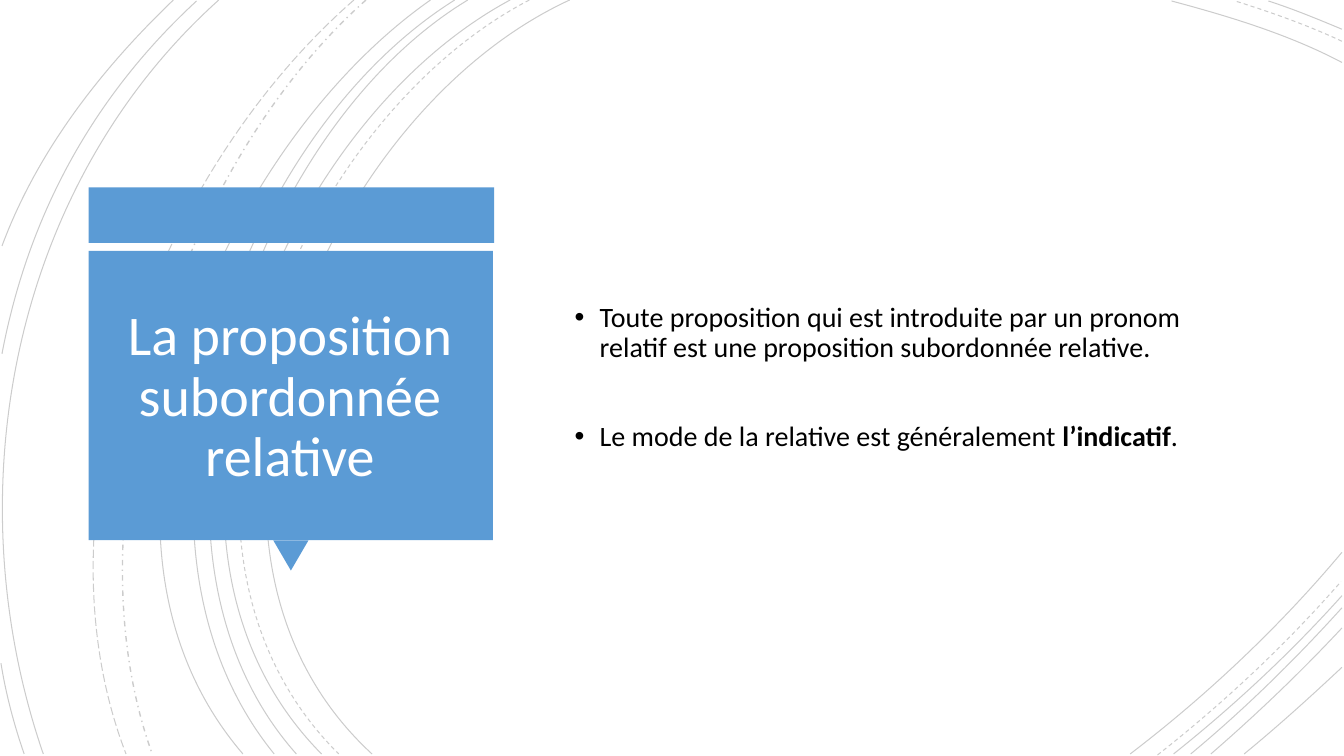
import pptx
import pptx.dml.color
import pptx.enum.dml
import pptx.enum.shapes
import pptx.enum.text
import pptx.oxml
import pptx.oxml.ns
import pptx.util
from lxml import etree

Inches = pptx.util.Inches
Pt = pptx.util.Pt
RGBColor = pptx.dml.color.RGBColor
Dash = pptx.enum.dml.MSO_LINE
Preset = pptx.enum.shapes.MSO_SHAPE
qn = pptx.oxml.ns.qn

BLUE = RGBColor(0x5B, 0x9B, 0xD5)
BLACK = RGBColor(0, 0, 0)
WHITE = RGBColor(255, 255, 255)

SOLID_ARCS = [
    [(5.65, 0), (3.15, 1.15), (1.43, 5.4), (3.69, 7.48)],
    [(13.31, 0.62), (12.78, 0.34), (12.18, 0.16), (11.62, 0.01)],
    [(11.21, 7.48), (11.97, 6.9), (12.69, 6.22), (13.31, 5.48)],
    [(5.06, 0), (2.7, 1.27), (1.1, 5.37), (3.19, 7.48)],
    [(13.31, 0.29), (13.07, 0.19), (12.83, 0.09), (12.58, 0.01)],
    [(11.64, 7.48), (12.23, 7.01), (12.8, 6.48), (13.31, 5.91)],
    [(4.64, 0), (2.44, 1.33), (1.1, 5.41), (2.94, 7.48)],
    [(11.81, 7.48), (12.34, 7.04), (12.84, 6.55), (13.31, 6.03)],
    [(4.51, 0), (2.31, 1.38), (0.97, 5.33), (2.72, 7.48)],
    [(12.01, 7.48), (12.46, 7.09), (12.9, 6.67), (13.31, 6.23)],
    [(4.27, 0), (2.17, 1.47), (0.53, 5.29), (2.41, 7.48)],
    [(12.34, 7.48), (12.67, 7.21), (12.99, 6.92), (13.31, 6.62)],
    [(2.17, 0), (0.11, 1.85), (-0.46, 4.9), (0.43, 7.48)],
    [(1.95, 0.01), (0.92, 0.96), (0.28, 2.14), (0.02, 3.51)],
    [(0.01, 6.58), (0.06, 6.89), (0.14, 7.19), (0.24, 7.48)],
    [(1.72, 0), (1, 0.69), (0.37, 1.5), (0.02, 2.44)],
]
DASHED_ARCS = [
    [(5.25, 0), (2.85, 1.25), (1.23, 5.37), (3.36, 7.48)],
    [(13.31, 0.41), (12.97, 0.25), (12.6, 0.12), (12.25, 0.01)],
    [(11.48, 7.49), (12.13, 6.98), (12.75, 6.4), (13.3, 5.77)],
]
DASH_DOT_ARC = [(3.63, 0), (1.76, 1.66), (0.65, 5.09), (1.51, 7.48)]
LONG_DASH_ARC = [(3.51, 0), (1.57, 1.69), (0.29, 4.99), (1.25, 7.48)]


class SlideBuilder:
    font_name = "Calibri"
    line_spacing = 0.9
    arc_opacity = 20

    def __init__(self, presentation):
        self.slide = presentation.slides.add_slide(presentation.slide_layouts[5])

    def arc(self, points, dash=Dash.SOLID, width=0.75):
        corners = [(Inches(x), Inches(y)) for x, y in points]
        builder = self.slide.shapes.build_freeform(*corners[0])
        builder.add_line_segments(corners[1:], close=False)
        shape = builder.convert_to_shape()
        shape.shadow.inherit = False
        shape.fill.background()
        shape.line.color.rgb = BLACK
        shape.line.width = Pt(width)
        shape.line.dash_style = dash
        color = next(shape.line._ln.iter(qn("a:srgbClr")))
        etree.SubElement(color, qn("a:alpha")).set("val", str(self.arc_opacity * 1000))
        segments = list(shape._element.iter(qn("a:lnTo")))
        curve = etree.SubElement(segments[0].getparent(), qn("a:cubicBezTo"))
        for segment in segments:
            curve.append(segment[0])
            segment.getparent().remove(segment)

    def block(self, preset, left, top, width, height, rotation=0):
        shape = self.slide.shapes.add_shape(
            preset, Inches(left), Inches(top), Inches(width), Inches(height))
        shape.shadow.inherit = False
        shape.rotation = rotation
        shape.fill.solid()
        shape.fill.fore_color.rgb = BLUE
        shape.line.fill.background()

    def run(self, paragraph, text, size, color, bold=False):
        run = paragraph.add_run()
        run.text = text
        run.font.name = self.font_name
        run.font.size = Pt(size)
        run.font.bold = bold
        run.font.color.rgb = color

    def frame(self, shape):
        frame = shape.text_frame
        frame.word_wrap = True
        frame.auto_size = pptx.enum.text.MSO_AUTO_SIZE.NONE
        frame.vertical_anchor = pptx.enum.text.MSO_ANCHOR.MIDDLE
        return frame

    def title(self, text, left, top, width, height):
        title = self.slide.shapes.title
        title.left, title.top = Inches(left), Inches(top)
        title.width, title.height = Inches(width), Inches(height)
        paragraph = self.frame(title).paragraphs[0]
        paragraph.alignment = pptx.enum.text.PP_ALIGN.CENTER
        paragraph.line_spacing = self.line_spacing
        self.run(paragraph, text, 40, WHITE)
        title._element.getparent().append(title._element)

    def bullets(self, items, left, top, width, height):
        box = self.slide.shapes.add_textbox(
            Inches(left), Inches(top), Inches(width), Inches(height))
        frame = self.frame(box)
        for index, (space_before, runs) in enumerate(items):
            paragraph = frame.add_paragraph() if index else frame.paragraphs[0]
            paragraph.line_spacing = self.line_spacing
            paragraph.space_before = Pt(space_before)
            properties = paragraph._p.get_or_add_pPr()
            properties.set("marL", str(Inches(0.25)))
            properties.set("indent", str(Inches(-0.25)))
            etree.SubElement(properties, qn("a:buFont")).set("typeface", "Arial")
            etree.SubElement(properties, qn("a:buChar")).set("char", "•")
            for text, bold in runs:
                self.run(paragraph, text, 20, BLACK, bold)


def main():
    presentation = pptx.Presentation()
    presentation.slide_width = Inches(13.33)
    presentation.slide_height = Inches(7.5)
    builder = SlideBuilder(presentation)

    for points in SOLID_ARCS:
        builder.arc(points)
    for points in DASHED_ARCS:
        builder.arc(points, Dash.DASH)
    builder.arc(DASH_DOT_ARC, Dash.DASH_DOT, 1)
    builder.arc(LONG_DASH_ARC, Dash.LONG_DASH)

    builder.block(Preset.RECTANGLE, 0.88, 1.86, 4.02, 0.55)
    builder.block(Preset.ISOSCELES_TRIANGLE, 2.71, 5.36, 0.35, 0.3, 180)
    builder.block(Preset.RECTANGLE, 0.88, 2.49, 4.01, 2.87)

    builder.title("La proposition subordonnée relative", 0.99, 2.64, 3.77, 2.62)
    builder.bullets([
        (10, [("Toute proposition qui est introduite par un pronom relatif "
               "est une proposition subordonnée relative.", False)]),
        (42, [("Le mode de la relative est généralement ", False),
              ("l’indicatif", True),
              (".", False)]),
    ], 5.6, 0.88, 6.87, 5.74)

    presentation.save("out.pptx")


if __name__ == "__main__":
    main()
